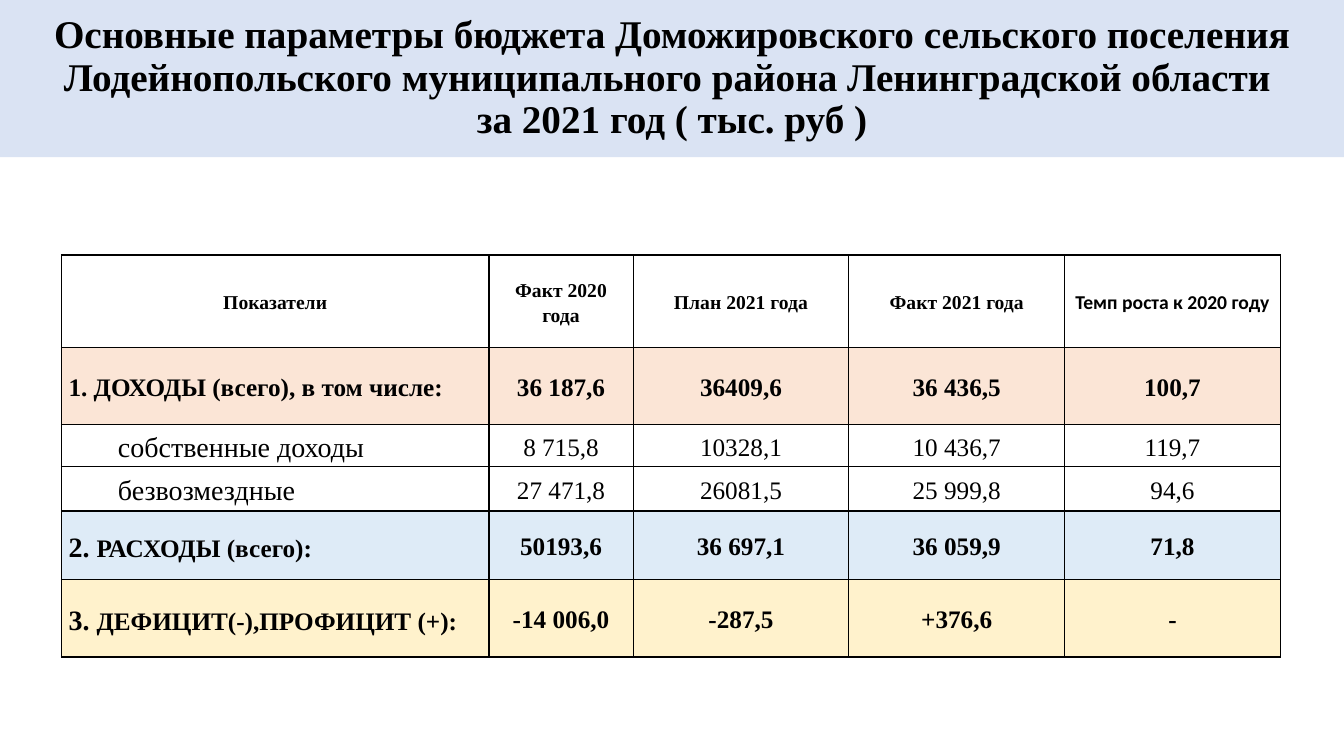
from lxml import etree
from pptx import Presentation
from pptx.dml.color import RGBColor
from pptx.enum.text import MSO_ANCHOR, MSO_AUTO_SIZE, PP_ALIGN
from pptx.oxml.ns import qn
from pptx.util import Inches, Pt

CENTER, LEFT = PP_ALIGN.CENTER, PP_ALIGN.LEFT
MIDDLE = MSO_ANCHOR.MIDDLE
NO_AUTOFIT = MSO_AUTO_SIZE.NONE
TITLE_ONLY = 5
SERIF, SANS = "Times New Roman", "Calibri"
COLORS = {
    "text": "000000",
    "border": "000000",
    "title": "DAE3F3",
    "plain": "FFFFFF",
    "income": "FBE5D6",
    "expense": "DEEBF7",
    "balance": "FFF2CC",
}
TITLE = (
    "Основные параметры бюджета Доможировского сельского поселения "
    "Лодейнопольского муниципального района Ленинградской области \v"
    "за 2021 год ( тыс. руб )"
)
COLUMN_WIDTHS = [4.24, 1.43, 2.14, 2.14, 2.14]
HEADER_HEIGHT = 0.92
HEADERS = ["Показатели", "Факт 2020 года", "План 2021 года",
           "Факт 2021 года", "Темп роста к 2020 году"]
# Height, fill, bold, indent, label runs with their sizes, values
BUDGET_ROWS = [
    (0.76, "income", True, 0, [("1. ДОХОДЫ (всего), в том числе:", 18)],
     ["36 187,6", "36409,6", "36 436,5", "100,7"]),
    (0.42, "plain", False, 0.49, [("собственные доходы", 20)],
     ["8 715,8", "10328,1", "10 436,7", "119,7"]),
    (0.44, "plain", False, 0.49, [("безвозмездные", 20)],
     ["27 471,8", "26081,5", "25 999,8", "94,6"]),
    (0.68, "expense", True, 0, [("2. ", 20), ("РАСХОДЫ (всего):", 18)],
     ["50193,6", "36 697,1", "36 059,9", "71,8"]),
    (0.77, "balance", True, 0, [("3. ", 20), ("ДЕФИЦИТ(-),ПРОФИЦИТ (+):", 18)],
     ["-14 006,0", "-287,5", "+376,6", "-"]),
]


def rgb(name):
    return RGBColor.from_string(COLORS[name])


def format_run(run, size, bold, font=SERIF):
    run.font.name = font
    run.font.size = Pt(size)
    run.font.bold = bold
    run.font.color.rgb = rgb("text")


def add_title(slide, left, top, width, height):
    title = slide.shapes.title
    title.left, title.top, title.width, title.height = left, top, width, height
    title.fill.solid()
    title.fill.fore_color.rgb = rgb("title")
    frame = title.text_frame
    frame.text = TITLE
    frame.word_wrap = True
    frame.auto_size = NO_AUTOFIT
    frame.vertical_anchor = MIDDLE
    para = frame.paragraphs[0]
    para.alignment = CENTER
    para.line_spacing = 0.9
    for run in para.runs:
        format_run(run, 28, True)


def add_borders(properties):
    """Insert the four border lines ahead of the cell's fill, as the schema asks."""
    for position, side in enumerate(("lnL", "lnR", "lnT", "lnB")):
        line = etree.Element(qn(f"a:{side}"), w=str(Pt(1)))
        fill = etree.SubElement(line, qn("a:solidFill"))
        etree.SubElement(fill, qn("a:srgbClr"), val=COLORS["border"])
        properties.insert(position, line)


def fill_cell(cell, runs, bold, fill, alignment=CENTER, font=SERIF, indent=0):
    cell.fill.solid()
    cell.fill.fore_color.rgb = rgb(fill)
    cell.vertical_anchor = MIDDLE
    cell.margin_left = cell.margin_right = Inches(0.07)
    cell.margin_top = cell.margin_bottom = 0
    para = cell.text_frame.paragraphs[0]
    para.alignment = alignment
    para.line_spacing = 1.15
    para.space_after = Pt(10)
    if indent:
        properties = para._p.get_or_add_pPr()
        properties.set("marL", str(Inches(indent)))
        properties.set("indent", "0")
    for text, size in runs:
        run = para.add_run()
        run.text = text
        format_run(run, size, bold, font)
    add_borders(cell._tc.get_or_add_tcPr())


def add_budget_table(slide, left, top):
    heights = [HEADER_HEIGHT] + [row[0] for row in BUDGET_ROWS]
    table = slide.shapes.add_table(
        len(heights), len(COLUMN_WIDTHS), left, top,
        Inches(sum(COLUMN_WIDTHS)), Inches(sum(heights))).table
    for column, width in zip(table.columns, COLUMN_WIDTHS):
        column.width = Inches(width)
    for row, height in zip(table.rows, heights):
        row.height = Inches(height)

    for column, header in enumerate(HEADERS):
        font = SANS if column == len(HEADERS) - 1 else SERIF
        fill_cell(table.cell(0, column), [(header, 14)], True, "plain", font=font)
    for index, (_, fill, bold, indent, label, values) in enumerate(BUDGET_ROWS, 1):
        fill_cell(table.cell(index, 0), label, bold, fill, LEFT, indent=indent)
        for column, value in enumerate(values, 1):
            fill_cell(table.cell(index, column), [(value, 18)], bold, fill)


def main():
    deck = Presentation()
    deck.slide_width, deck.slide_height = Inches(13.33), Inches(7.5)
    slide = deck.slides.add_slide(deck.slide_layouts[TITLE_ONLY])
    add_title(slide, 0, 0, deck.slide_width, Inches(1.56))
    add_budget_table(slide, Inches(0.61), Inches(2.53))
    deck.save("out.pptx")


if __name__ == "__main__":
    main()
